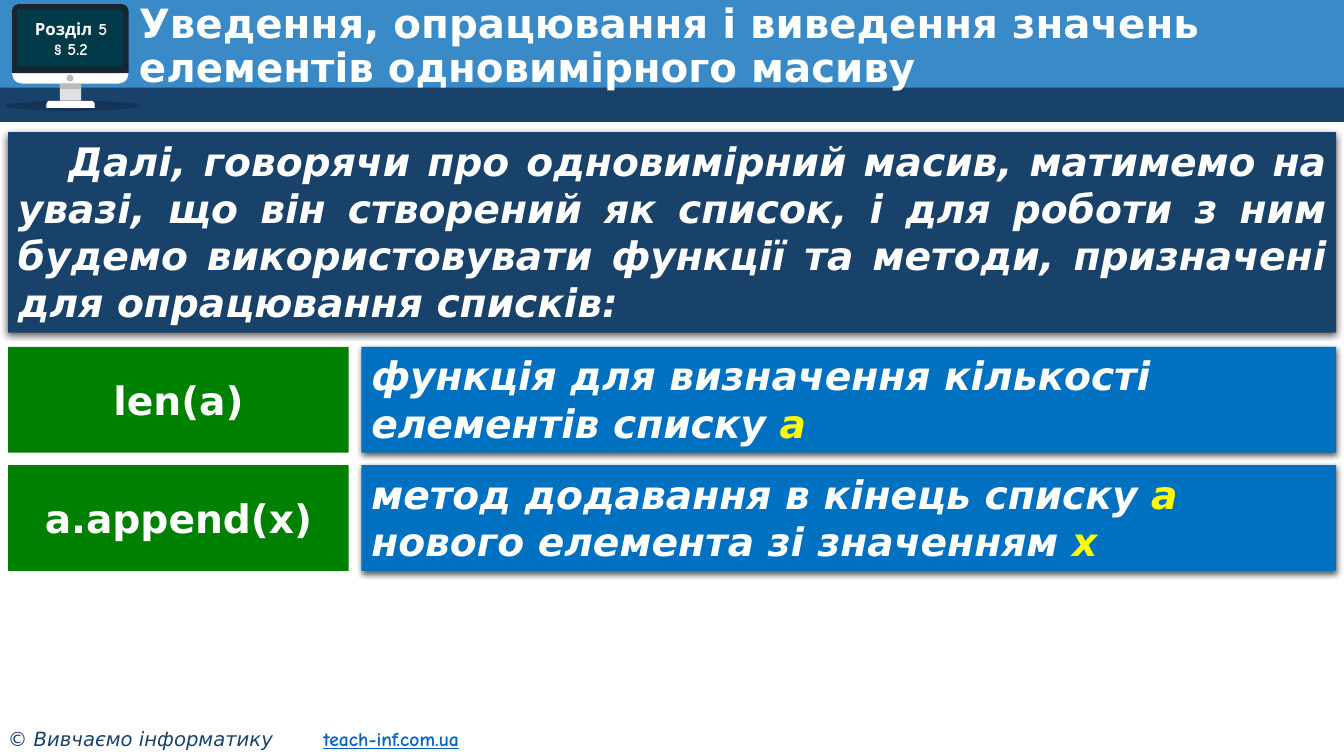
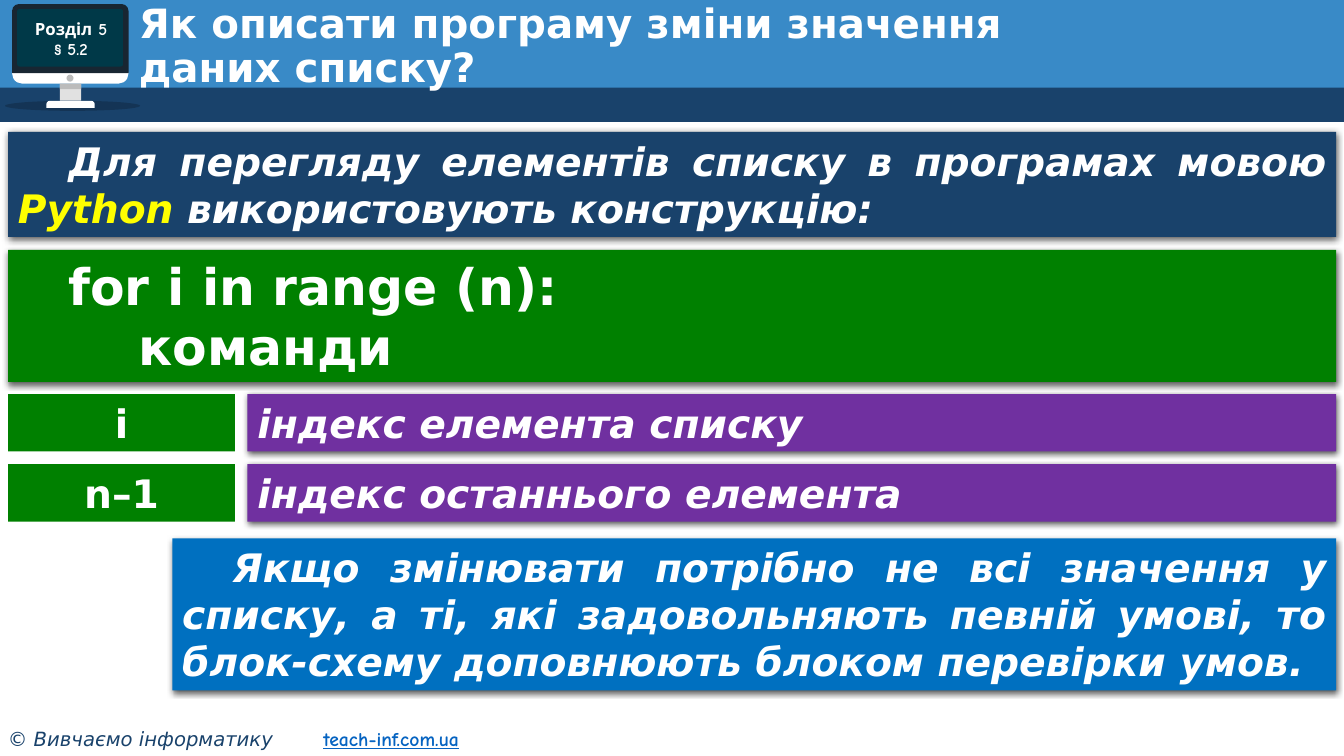
import pptx
import pptx.dml.color
import pptx.enum.shapes
import pptx.enum.text
import pptx.oxml
import pptx.oxml.ns
import pptx.util

SHAPE = pptx.enum.shapes.MSO_SHAPE
ALIGN = pptx.enum.text.PP_ALIGN
ANCHOR = pptx.enum.text.MSO_ANCHOR

COLORS = {
    "sky": "398AC7", "navy": "19426B", "blue": "0070C0", "green": "008000",
    "purple": "7030A0", "white": "FFFFFF", "yellow": "FFFF00", "link": "0563C1",
    "black": "000000", "bezel": "182632", "glass": "003948",
    "stand": "E1E1E1", "metal": "BBBBBB",
}
CELL = 0.1  # inches in one column or row of the grid
COLUMNS, ROWS = 133.33, 75
LEFT, RIGHT, GAP = 0.8, 132.55, 1.25
MAIN_FONT, HAND_FONT = "DejaVu Sans", "Comic Neue"


def cells(count):
    return pptx.util.Inches(count * CELL)


class Deck:
    """Holds the style and the slide being filled; places are grid cells."""

    def __init__(self):
        self.presentation = pptx.Presentation()
        self.presentation.slide_width = cells(COLUMNS)
        self.presentation.slide_height = cells(ROWS)
        self.slide = None

    def shape(self, left, top, width, height, color, kind=SHAPE.RECTANGLE,
              rounding=None, opacity=None, shadow=False):
        shape = self.slide.shapes.add_shape(
            kind, cells(left), cells(top), cells(width), cells(height))
        shape.shadow.inherit = False
        shape.line.fill.background()
        shape.fill.solid()
        shape.fill.fore_color.rgb = pptx.dml.color.RGBColor.from_string(COLORS[color])
        if rounding is not None:
            shape.adjustments[0] = rounding
        if opacity is not None:
            fill_color = shape._element.spPr.find(".//" + pptx.oxml.ns.qn("a:srgbClr"))
            fill_color.append(pptx.oxml.parse_xml(
                f'<a:alpha {pptx.oxml.ns.nsdecls("a")} val="{opacity * 1000}"/>'))
        if shadow:
            self.drop_shadow(shape)
        return shape

    def drop_shadow(self, shape):
        effects = shape._element.spPr.find(pptx.oxml.ns.qn("a:effectLst"))
        effects.append(pptx.oxml.parse_xml(
            f'<a:outerShdw {pptx.oxml.ns.nsdecls("a")} blurRad="{pptx.util.Pt(4.5)}" '
            f'dist="{pptx.util.Pt(1.5)}" dir="5400000" algn="t" rotWithShape="0">'
            f'<a:srgbClr val="{COLORS["black"]}"><a:alpha val="63000"/></a:srgbClr>'
            '</a:outerShdw>'))

    def text_box(self, left, top, width, height):
        return self.slide.shapes.add_textbox(
            cells(left), cells(top), cells(width), cells(height))

    def style(self, run, size, color="white", bold=True, italic=False,
              underline=False, font=MAIN_FONT):
        run.font.name = font
        run.font.size = pptx.util.Pt(size)
        run.font.bold = bold
        run.font.italic = italic
        run.font.underline = underline
        run.font.color.rgb = pptx.dml.color.RGBColor.from_string(COLORS[color])

    def add_text(self, shape, paragraphs, size, align=ALIGN.LEFT, anchor=ANCHOR.TOP,
                 indent=0, spacing=None, **look):
        """Fill a shape; in a paragraph, text between asterisks turns yellow."""
        frame = shape.text_frame
        frame.word_wrap = True
        frame.vertical_anchor = anchor
        for number, text in enumerate(paragraphs):
            paragraph = frame.add_paragraph() if number else frame.paragraphs[0]
            paragraph.alignment = align
            if indent:
                paragraph._p.get_or_add_pPr().set("indent", str(cells(indent)))
            if spacing:
                paragraph.line_spacing = spacing
            pieces = text.split("*")
            if len(pieces) == 1:
                paragraph.text = text
                for run in paragraph.runs:
                    self.style(run, size, **look)
                continue
            for position, piece in enumerate(pieces):
                if piece:
                    run = paragraph.add_run()
                    run.text = piece
                    color = "yellow" if position % 2 else "white"
                    self.style(run, size, color, **look)

    def new_slide(self, title):
        self.slide = self.presentation.slides.add_slide(
            self.presentation.slide_layouts[6])
        self.shape(0, 0, COLUMNS, 9.1, "sky")
        self.shape(0, 8.7, COLUMNS, 3.4, "navy")
        self.monitor("Розділ 5", "§ 5.2")
        self.footer("© Вивчаємо інформатику", "teach-inf.com.ua")
        self.add_text(self.text_box(12.8, 1.8, 117.2, 5.8), [title], 28.8,
                      anchor=ANCHOR.MIDDLE, spacing=0.9)

    def monitor(self, *caption):
        rounded = SHAPE.ROUNDED_RECTANGLE
        self.shape(0.5, 10, 13.4, 1, "black", SHAPE.OVAL, opacity=20)
        self.shape(1.2, 6.3, 11.55, 2, "white", rounded, rounding=0.5)
        self.shape(1.2, 0.4, 11.55, 6.85, "bezel",
                   SHAPE.ROUND_2_SAME_RECTANGLE, rounding=0.1)
        self.shape(5.95, 8.3, 2.1, 1.7, "stand")
        self.shape(5.95, 8.3, 2.1, 0.55, "metal")
        self.shape(4.6, 10, 4.8, 0.7, "white",
                   SHAPE.ROUND_2_SAME_RECTANGLE, rounding=0.5)
        self.shape(6.6, 7.4, 0.7, 0.7, "metal", SHAPE.OVAL)
        self.shape(1.7, 0.9, 10.5, 5.7, "glass", rounded, rounding=0.04)
        self.add_text(self.text_box(1.3, 0.9, 11.5, 5.9), caption, 12,
                      ALIGN.CENTER, ANCHOR.MIDDLE, font=HAND_FONT)

    def footer(self, owner, address):
        box = self.text_box(-0.2, 71.6, 52.3, 3.4)
        self.add_text(box, [owner + "\t"], 14, color="navy", bold=False, italic=True)
        paragraph = box.text_frame.paragraphs[0]
        paragraph._p.get_or_add_pPr().append(pptx.oxml.parse_xml(
            f'<a:tabLst {pptx.oxml.ns.nsdecls("a")}>'
            f'<a:tab pos="{cells(31.3)}" algn="l"/></a:tabLst>'))
        link = paragraph.add_run()
        link.text = address
        self.style(link, 14, "link", underline=True, font=HAND_FONT)

    def panel(self, top, height, color, paragraphs, left=LEFT, size=28,
              align=ALIGN.JUSTIFY, indent=5, italic=True):
        """Shadowed block that reaches the right margin."""
        shape = self.shape(left, top, RIGHT - left, height, color, shadow=True)
        self.add_text(shape, paragraphs, size, align, indent=indent, italic=italic)

    def definitions(self, top, height, label_width, color, entries):
        """Rows of a green term and its explanation, equally spaced."""
        for number, (term, meaning) in enumerate(entries):
            row = top + number * (height + GAP)
            self.panel(row, height, color, [meaning], LEFT + label_width + GAP,
                       align=ALIGN.LEFT, indent=0)
            label = self.shape(LEFT, row, label_width, height, "green")
            self.add_text(label, [term], 28, ALIGN.CENTER, ANCHOR.MIDDLE)


def main():
    deck = Deck()

    deck.new_slide("Уведення, опрацювання і виведення значень елементів "
                   "одновимірного масиву")
    deck.panel(13.1, 19.9, "navy", [
        "Далі, говорячи про одновимірний масив, матимемо на увазі, що він "
        "створений як список, і для роботи з ним будемо використовувати функції "
        "та методи, призначені для опрацювання списків:"])
    deck.definitions(34.4, 10.5, 33.8, "blue", [
        ("len(a)", "функція для визначення кількості елементів списку *а*"),
        ("a.append(x)", "метод додавання в кінець списку *а* нового елемента "
                        "зі значенням *х*"),
    ])

    deck.new_slide("Як описати програму зміни значення\vданих списку?")
    deck.panel(13.1, 10.4, "navy", [
        "Для перегляду елементів списку в програмах мовою *Python* "
        "використовують конструкцію:"])
    deck.panel(24.8, 13.1, "green", ["for i in range (n):", "    команди"],
               size=36, italic=False)
    deck.definitions(39.1, 5.7, 22.5, "purple", [
        ("і", "індекс елемента списку"),
        ("n–1", "індекс останнього елемента"),
    ])
    deck.panel(53.4, 15.1, "blue", [
        "Якщо змінювати потрібно не всі значення у списку, а ті, які "
        "задовольняють певній умові, то блок-схему доповнюють блоком перевірки "
        "умов."], left=17.1)

    deck.presentation.save("out.pptx")


if __name__ == "__main__":
    main()
